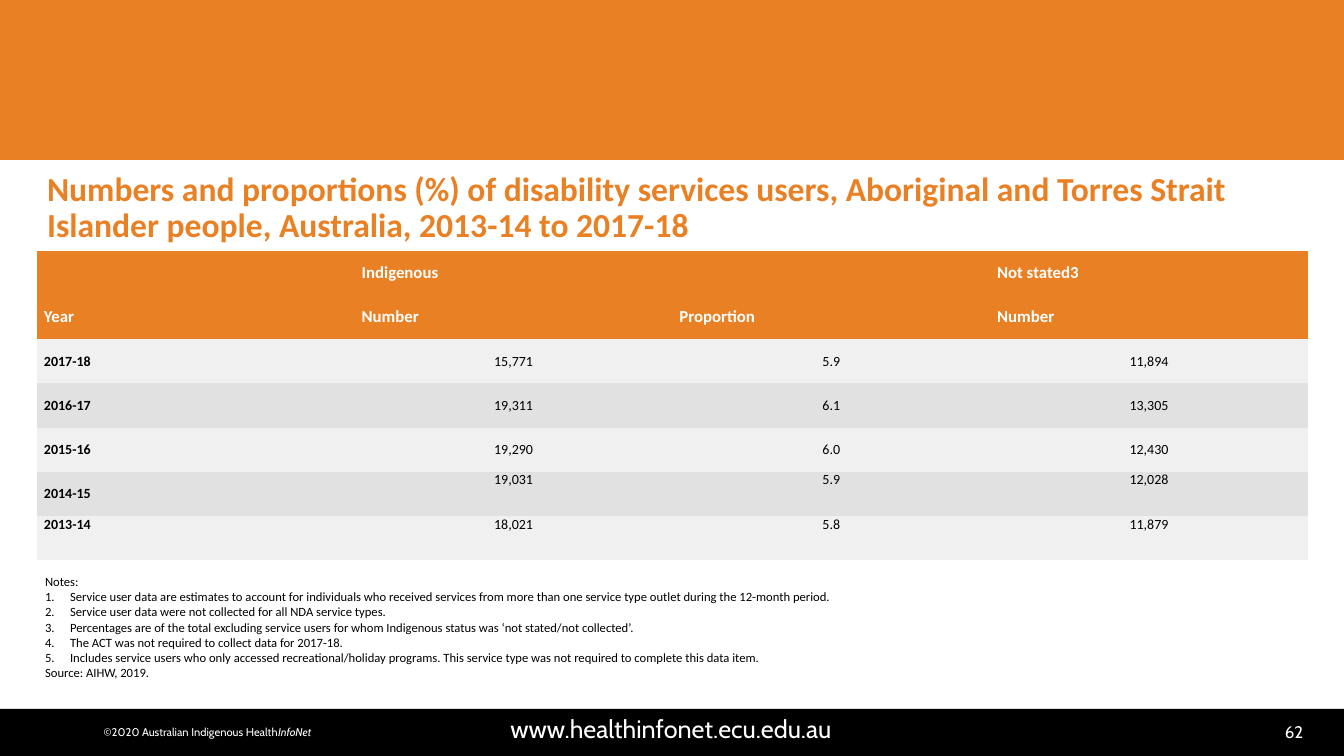
from dataclasses import dataclass
from lxml.etree import SubElement
from pptx import Presentation
from pptx.dml.color import RGBColor as Color
from pptx.enum.shapes import MSO_SHAPE as Shape
from pptx.enum.text import MSO_ANCHOR as Anchor, MSO_AUTO_SIZE as AutoSize, PP_ALIGN as Align
from pptx.oxml.ns import qn
from pptx.util import Emu, Pt


@dataclass(frozen=True)
class Theme:
    orange: str = "EA8024"
    black: str = "000000"
    white: str = "FFFFFF"
    bands: tuple = ("F0F0F0", "E1E1E1")
    body_font: str = "Calibri"
    footer_font: str = "Cabin"
    title_size: int = 24
    header_size: int = 12
    value_size: int = 10
    remark_size: int = 9
    address_size: int = 18
    number_size: int = 12
    copyright_size: int = 8


theme = Theme()


def px(*lengths):
    return [Emu(round(length * 914400 / 100.8)) for length in lengths]


def style(paragraph, size, color, name=theme.body_font, bold=False, align=Align.LEFT):
    paragraph.alignment = align
    font = paragraph.font
    font.size, font.name, font.bold = Pt(size), name, bold
    font.color.rgb = Color.from_string(color)


presentation = Presentation()
presentation.slide_width, presentation.slide_height = px(1344, 756)
slide = presentation.slides.add_slide(presentation.slide_layouts[1])
title, remarks = slide.placeholders

for top, height, color in [(0, 160, theme.orange), (709, 47, theme.black)]:
    band = slide.shapes.add_shape(Shape.RECTANGLE, *px(0, top, 1344, height))
    band.shadow.inherit = False
    band.fill.solid()
    band.fill.fore_color.rgb = Color.from_string(color)
    band.line.fill.background()

footer = [
    ((1205, 717, 108, 30), ["62"], theme.number_size, Align.RIGHT),
    ((62, 709, 1218, 39), ["www.healthinfonet.ecu.edu.au"], theme.address_size, Align.CENTER),
    ((92, 720, 231, 24), ["©2020 Australian Indigenous Health", "InfoNet"], theme.copyright_size, Align.CENTER),
]
for place, texts, size, align in footer:
    frame = slide.shapes.add_textbox(*px(*place)).text_frame
    frame.word_wrap = True
    frame.vertical_anchor = Anchor.MIDDLE
    paragraph = frame.paragraphs[0]
    style(paragraph, size, theme.white, theme.footer_font, align=align)
    for index, text in enumerate(texts):
        run = paragraph.add_run()
        run.text = text
        if index:
            run.font.italic = True

title.left, title.top, title.width, title.height = px(37, 166, 1270, 85)
frame = title.text_frame
frame.text = (
    "Numbers and proportions (%) of disability services users, Aboriginal and Torres Strait "
    "Islander people, Australia, 2013-14 to 2017-18"
)
frame.auto_size = AutoSize.NONE
frame.vertical_anchor = Anchor.MIDDLE
frame.paragraphs[0].line_spacing = 0.9
style(frame.paragraphs[0], theme.title_size, theme.orange, bold=True)

rows = [
    ("", "Indigenous", "", "Not stated3"),
    ("Year", "Number", "Proportion", "Number"),
    ("2017-18", "15,771", "5.9", "11,894"),
    ("2016-17", "19,311", "6.1", "13,305"),
    ("2015-16", "19,290", "6.0", "12,430"),
    ("2014-15", "19,031", "5.9", "12,028"),
    ("2013-14", "18,021", "5.8", "11,879"),
]
top_aligned = {(5, 1), (5, 2), (5, 3), (6, 0), (6, 1), (6, 2), (6, 3)}
table = slide.shapes.add_table(len(rows), 4, *px(37, 251, 1271, 309)).table
table.horz_banding = False
table._tbl.tblPr.find(qn("a:tableStyleId")).text = "{2D5ABB26-0587-4C30-8999-92F81FD0307C}"
for row_index, row in enumerate(rows):
    header = row_index < 2
    fill = theme.orange if header else theme.bands[row_index % 2]
    for column_index, text in enumerate(row):
        cell = table.cell(row_index, column_index)
        cell.text = text
        cell.fill.solid()
        cell.fill.fore_color.rgb = Color.from_string(fill)
        cell.margin_left, cell.margin_top, cell.margin_right, cell.margin_bottom = px(7, 0, 7, 0)
        cell.vertical_anchor = Anchor.TOP if (row_index, column_index) in top_aligned else Anchor.MIDDLE
        style(
            cell.text_frame.paragraphs[0],
            theme.header_size if header else theme.value_size,
            theme.white if header else theme.black,
            bold=header or column_index == 0,
            align=Align.LEFT if header or column_index == 0 else Align.CENTER,
        )
table.cell(0, 1).merge(table.cell(0, 2))

remark_lines = [
    "Notes:",
    "Service user data are estimates to account for individuals who received services from more than one "
    "service type outlet during the 12-month period.",
    "Service user data were not collected for all NDA service types.",
    "Percentages are of the total excluding service users for whom Indigenous status was ‘not stated/not collected’.",
    "The ACT was not required to collect data for 2017-18.",
    "Includes service users who only accessed recreational/holiday programs. This service type was not required "
    "to complete this data item.",
    "Source: AIHW, 2019.",
]
remarks.left, remarks.top, remarks.width, remarks.height = px(35, 569, 1271, 130)
frame = remarks.text_frame
frame.text = "\n".join(remark_lines)
frame.auto_size = AutoSize.NONE
frame.vertical_anchor = Anchor.TOP
for index, paragraph in enumerate(frame.paragraphs):
    properties = paragraph._p.get_or_add_pPr()
    numbered = 0 < index < len(remark_lines) - 1
    indent = px(25)[0] if numbered else 0
    properties.set("marL", str(indent))
    properties.set("indent", str(-indent))
    if numbered:
        SubElement(properties, qn("a:buFont"), typeface="+mj-lt")
        SubElement(properties, qn("a:buAutoNum"), type="arabicPeriod")
    else:
        SubElement(properties, qn("a:buNone"))
    paragraph.space_before = Pt(0)
    style(paragraph, theme.remark_size, theme.black)

presentation.save("out.pptx")
